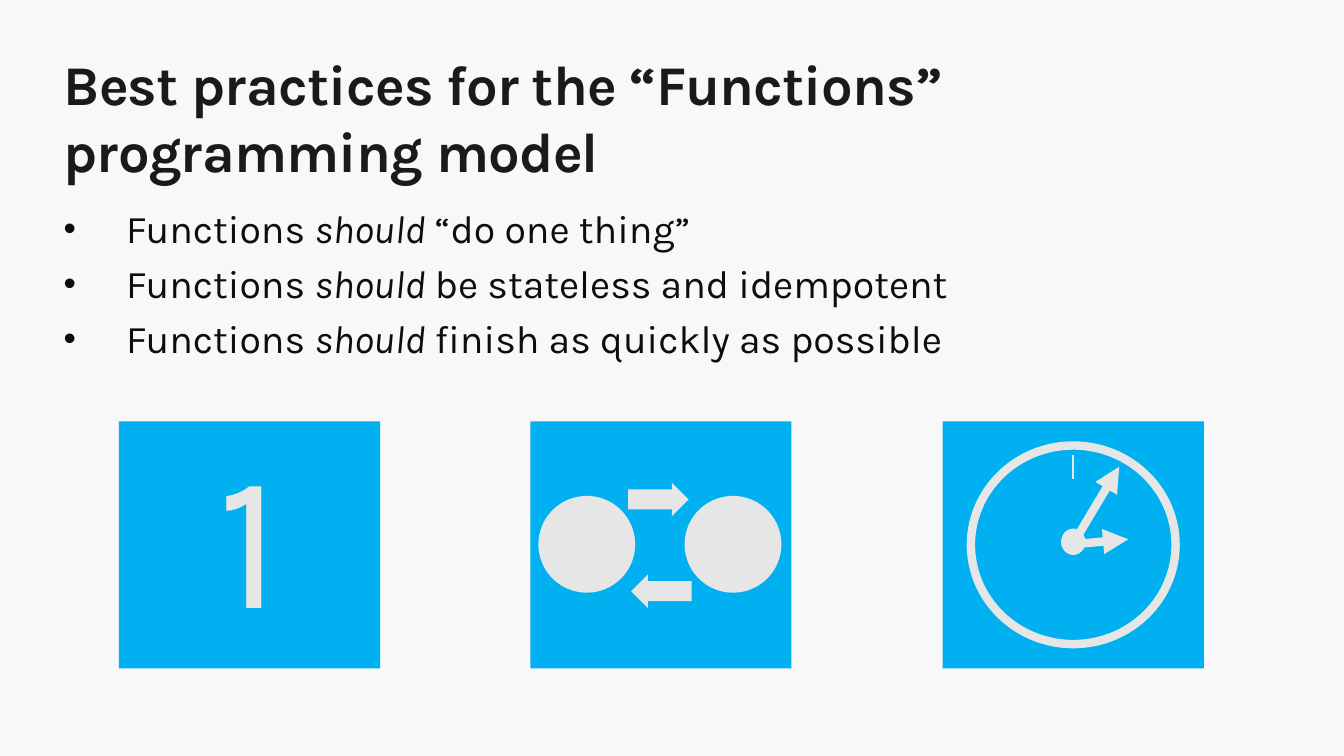
from lxml import etree
from pptx import Presentation
from pptx.dml.color import RGBColor
from pptx.enum.shapes import MSO_CONNECTOR, MSO_SHAPE
from pptx.enum.text import MSO_ANCHOR, PP_ALIGN
from pptx.oxml.ns import qn
from pptx.util import Inches, Pt

RECT, OVAL, ARROW = MSO_SHAPE.RECTANGLE, MSO_SHAPE.OVAL, MSO_SHAPE.RIGHT_ARROW
STRAIGHT = MSO_CONNECTOR.STRAIGHT
TOP = MSO_ANCHOR.TOP
LEFT, CENTER = PP_ALIGN.LEFT, PP_ALIGN.CENTER

FONT = "Karla"
COLORS = {"background": "F8F8F8", "title": "1A1A1A", "body": "0D0D0D",
          "tile": "00B0F0", "icon": "E6E6E6"}
TITLE_ONLY = 5
TILE_LEFTS = (1.18, 5.26, 9.35)
CLOCK_CENTER = (10.64, 5.4)
PRACTICES = ("“do one thing”", "be stateless and idempotent",
             "finish as quickly as possible")


def color(name):
    return RGBColor.from_string(COLORS[name])


def style(font, size, color_name, bold=False):
    font.name = FONT
    font.size = Pt(size)
    font.bold = bold
    font.color.rgb = color(color_name)


def prepare_frame(frame, side=0, vertical=0):
    """Wrap the text, anchor it at the top and set its insets in inches."""
    frame.word_wrap = True
    frame.vertical_anchor = TOP
    frame.margin_left = frame.margin_right = Inches(side)
    frame.margin_top = frame.margin_bottom = Inches(vertical)


def add_title(slide, text):
    title = slide.shapes.title
    title.left, title.top = Inches(0.63), Inches(0.49)
    title.width, title.height = Inches(11.81), Inches(1.35)
    prepare_frame(title.text_frame)
    title.text_frame.text = text
    paragraph = title.text_frame.paragraphs[0]
    paragraph.alignment = LEFT
    run = paragraph.runs[0]
    style(run.font, 40, "title", bold=True)
    run.font._element.set("spc", "-50")


def add_bullet(paragraph):
    properties = paragraph._p.get_or_add_pPr()
    indent = Inches(0.62)
    properties.set("marL", str(indent))
    properties.set("indent", str(-indent))
    etree.SubElement(properties, qn("a:buSzPct"), val="90000")
    etree.SubElement(properties, qn("a:buFont"), typeface="Arial")
    etree.SubElement(properties, qn("a:buChar"), char="•")


def add_practices(slide):
    box = slide.shapes.add_textbox(Inches(0.63), Inches(2.03),
                                   Inches(11.99), Inches(1.6))
    frame = box.text_frame
    prepare_frame(frame)
    for index, practice in enumerate(PRACTICES):
        paragraph = frame.paragraphs[0] if index == 0 else frame.add_paragraph()
        add_bullet(paragraph)
        if index:
            paragraph.space_before = Pt(5.6)
        for text in ("Functions ", "should", f" {practice}"):
            run = paragraph.add_run()
            run.text = text
            style(run.font, 28, "body")
            run.font.italic = text == "should"


def add_figure(slide, preset, left, top, width, height, fill=None, line=0):
    """Add a preset shape; line is the outline width in points."""
    figure = slide.shapes.add_shape(preset, Inches(left), Inches(top),
                                    Inches(width), Inches(height))
    figure.shadow.inherit = False
    if fill:
        figure.fill.solid()
        figure.fill.fore_color.rgb = color(fill)
    else:
        figure.fill.background()
    if line:
        figure.line.color.rgb = color("icon")
        figure.line.width = Pt(line)
    else:
        figure.line.fill.background()
    return figure


def add_line(slide, start, end, width, arrow=False):
    line = slide.shapes.add_connector(STRAIGHT, *map(Inches, start + end))
    line.line.color.rgb = color("icon")
    line.line.width = Pt(width)
    if arrow:
        etree.SubElement(line.line._get_or_add_ln(), qn("a:tailEnd"), type="triangle")
    etree.SubElement(line._element.spPr, qn("a:effectLst"))


def add_one(slide):
    box = slide.shapes.add_textbox(Inches(1.42), Inches(4.22),
                                   Inches(2.11), Inches(2.45))
    prepare_frame(box.text_frame, 0.2, 0.16)
    box.text_frame.text = "1"
    paragraph = box.text_frame.paragraphs[0]
    paragraph.alignment = CENTER
    paragraph.line_spacing = 0.9
    paragraph.space_after = Pt(6)
    style(paragraph.runs[0].font, 138, "icon")


def add_exchange(slide):
    for left in (5.34, 6.79):
        add_figure(slide, OVAL, left, 4.92, 0.96, 0.96, "icon")
    for left, top, rotation in ((6.23, 4.79, 0), (6.26, 5.7, 180)):
        arrow = add_figure(slide, ARROW, left, top, 0.6, 0.33, "icon")
        arrow.adjustments[0] = 0.6
        arrow.adjustments[1] = 0.5
        arrow.rotation = rotation


def add_clock(slide):
    add_figure(slide, OVAL, 9.63, 4.42, 2.03, 1.97, line=6)
    add_line(slide, (10.64, 4.51), (10.64, 4.75), 1.5)
    for hand_tip in ((11.1, 4.63), (11.19, 5.35)):
        add_line(slide, CLOCK_CENTER, hand_tip, 6, arrow=True)
    add_figure(slide, OVAL, 10.53, 5.25, 0.23, 0.25, "icon", line=0.85)


def main():
    deck = Presentation()
    deck.slide_width, deck.slide_height = Inches(13.33), Inches(7.5)
    slide = deck.slides.add_slide(deck.slide_layouts[TITLE_ONLY])
    slide.background.fill.solid()
    slide.background.fill.fore_color.rgb = color("background")
    add_title(slide, "Best practices for the “Functions” programming model")
    add_practices(slide)
    for left in TILE_LEFTS:
        add_figure(slide, RECT, left, 4.18, 2.59, 2.45, "tile")
    add_one(slide)
    add_exchange(slide)
    add_clock(slide)
    deck.save("out.pptx")


if __name__ == "__main__":
    main()
